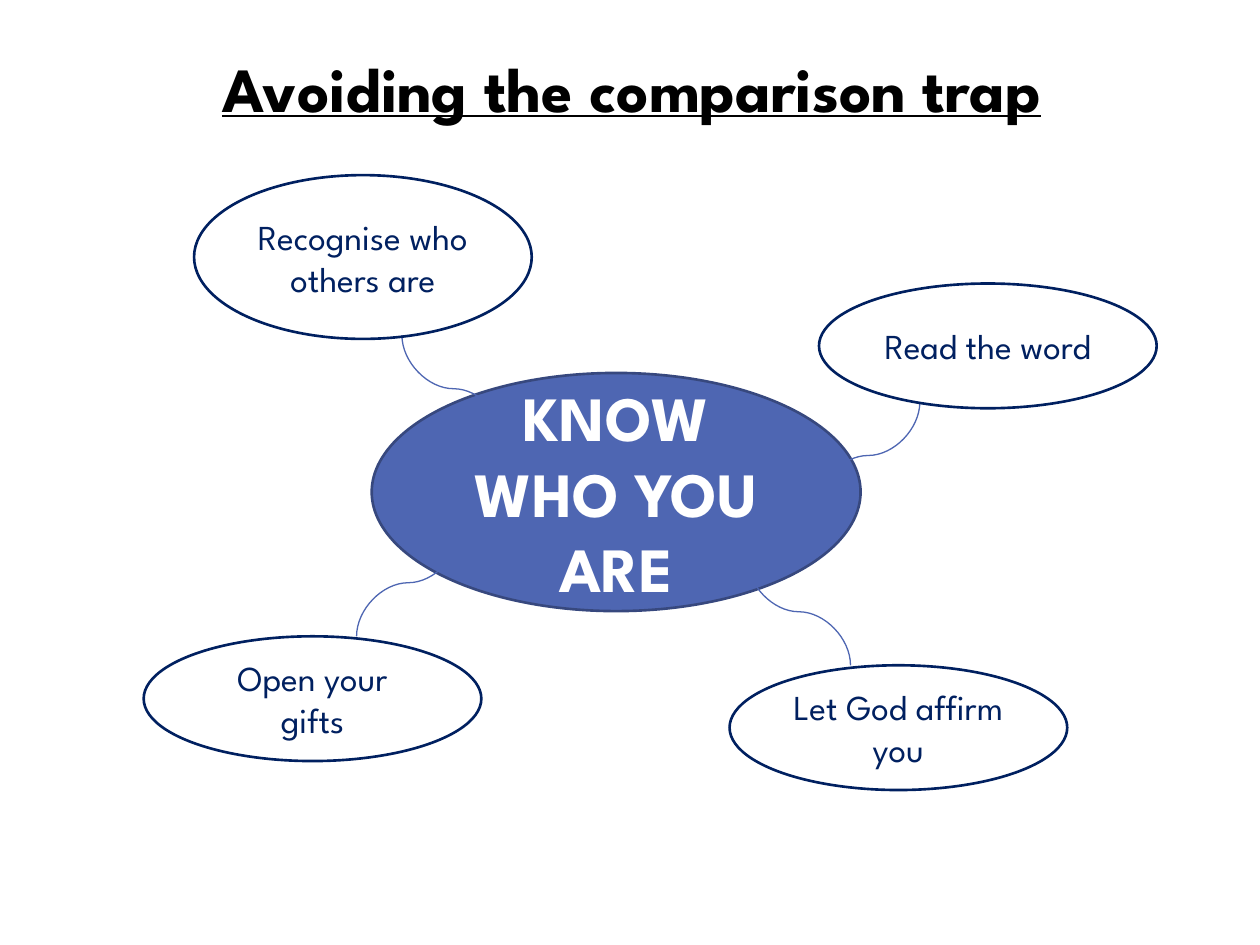
from typing import NamedTuple

from lxml.etree import SubElement
from pptx import Presentation
from pptx.dml.color import RGBColor
from pptx.enum.shapes import MSO_CONNECTOR as Connector, MSO_SHAPE as Shape
from pptx.enum.text import MSO_ANCHOR as Anchor, MSO_AUTO_SIZE as AutoSize, PP_ALIGN as Align
from pptx.oxml.ns import qn
from pptx.util import Inches, Pt

COLORS = {"title": "000000", "navy": "002060", "blue": "4E66B2", "edge": "37487E", "white": "FFFFFF"}
FONT = "League Spartan"
BUBBLE_WIDTH = 2.68
LINK_WIDTH, LINK_HEIGHT = 0.82, 0.85


class Bubble(NamedTuple):
    text: str
    left: float
    top: float
    height: float
    link_x: float
    link_y: float
    side: int
    direction: int


BUBBLES = [
    Bubble("Read the word", 6.5, 2.25, 0.99, 6.48, 4.04, 1, -1),
    Bubble("Let God affirm you", 5.79, 5.28, 0.99, 5.93, 4.43, 1, 1),
    Bubble("Recognise who others are", 1.54, 1.39, 1.3, 4.01, 3.51, -1, -1),
    Bubble("Open your gifts", 1.14, 5.05, 0.99, 3.65, 4.2, -1, 1),
]


def color(name: str) -> RGBColor:
    return RGBColor.from_string(COLORS[name])


def write(shape, text: str, size: int, color_name: str, bold: bool = False) -> None:
    shape.text_frame.text = text
    shape.text_frame.word_wrap = True
    paragraph = shape.text_frame.paragraphs[0]
    paragraph.alignment = Align.CENTER
    font = paragraph.font
    font.name, font.size, font.bold = FONT, Pt(size), bold
    font.color.rgb = color(color_name)


def add_title(slide, text: str) -> None:
    title = slide.shapes.title
    title.left, title.top, title.width, title.height = map(Inches, (1.06, 0.34, 7.91, 0.71))
    write(title, text, 36, "title", bold=True)
    title.text_frame.paragraphs[0].font.underline = True
    title.text_frame.vertical_anchor = Anchor.TOP
    title.text_frame.auto_size = AutoSize.SHAPE_TO_FIT_TEXT


def add_ellipse(slide, left: float, top: float, width: float, height: float, line: str):
    ellipse = slide.shapes.add_shape(Shape.OVAL, *map(Inches, (left, top, width, height)))
    ellipse.shadow.inherit = False
    ellipse.fill.background()
    ellipse.line.color.rgb = color(line)
    ellipse.line.width = Pt(1.5)
    ellipse.text_frame.vertical_anchor = Anchor.MIDDLE
    return ellipse


def add_link(slide, bubble: Bubble) -> None:
    half_x = bubble.side * LINK_WIDTH / 2
    half_y = bubble.direction * LINK_HEIGHT / 2
    center_x, center_y = bubble.link_x + half_x, bubble.link_y + half_y
    ends = (center_x - half_y, center_y + half_x, center_x + half_y, center_y - half_x)
    link = slide.shapes.add_connector(Connector.CURVE, *map(Inches, ends))
    properties = link._element.spPr
    properties.find(qn("a:xfrm")).set("rot", str(90 * 60000))
    link.line.color.rgb = color("blue")
    link.line.width = Pt(0.75)
    SubElement(properties, qn("a:effectLst"))


def main() -> None:
    presentation = Presentation()
    presentation.slide_width, presentation.slide_height = Inches(10), Inches(7.5)
    slide = presentation.slides.add_slide(presentation.slide_layouts[5])
    add_title(slide, "Avoiding the comparison trap")

    center = add_ellipse(slide, 2.95, 2.96, 3.88, 1.89, "edge")
    center.fill.solid()
    center.fill.fore_color.rgb = color("blue")
    write(center, "KNOW WHO YOU ARE", 36, "white", bold=True)

    for bubble in BUBBLES:
        add_link(slide, bubble)
        ellipse = add_ellipse(slide, bubble.left, bubble.top, BUBBLE_WIDTH, bubble.height, "navy")
        write(ellipse, bubble.text, 20, "navy")

    presentation.save("out.pptx")


if __name__ == "__main__":
    main()
